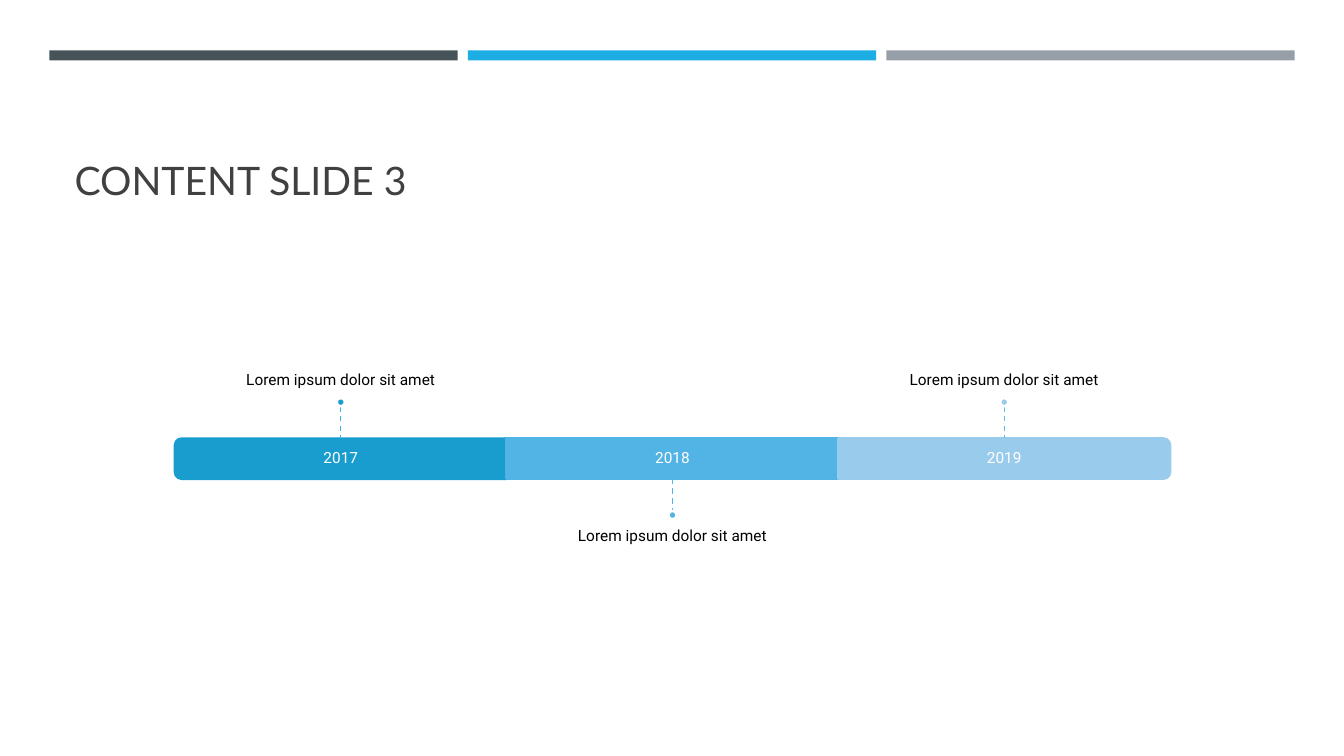
from dataclasses import dataclass

import pptx
import pptx.dml.color
import pptx.enum.dml
import pptx.enum.shapes
import pptx.enum.text
import pptx.oxml
import pptx.util

Inches = pptx.util.Inches
Pt = pptx.util.Pt
Shape = pptx.enum.shapes.MSO_SHAPE
Anchor = pptx.enum.text.MSO_ANCHOR
Align = pptx.enum.text.PP_ALIGN

COLORS = {
    "slate": "465359", "sky": "1CADE4", "gray": "969FA7", "title": "404040",
    "black": "000000", "white": "FFFFFF",
    "2017": "199DCF", "2018": "52B3E5", "2019": "99CBEC",
    "2017 dash": "36B3E9", "2018 dash": "48B8EC", "2019 dash": "5ABEEF",
}
STRIPES = ("slate", "sky", "gray")
BAR_W, BAR_H, BAR_TOP = 3.29, 0.4, 4.35
MIDDLE = 6.67
STEM, DOT = 0.32, 0.08
CAPTION_W, CAPTION_H = 5.48, 1.39
INSET = 0.09


@dataclass
class Milestone:
    """One year of the timeline, with its caption above or below the bar."""
    year: str
    caption: str
    kind: int
    rotation: int
    above: bool


MILESTONES = (
    Milestone("2017", "Lorem ipsum dolor sit amet", Shape.ROUND_2_SAME_RECTANGLE, 270, True),
    Milestone("2018", "Lorem ipsum dolor sit amet", Shape.RECTANGLE, 0, False),
    Milestone("2019", "Lorem ipsum dolor sit amet", Shape.ROUND_2_SAME_RECTANGLE, 90, True),
)


def rgb(name: str) -> pptx.dml.color.RGBColor:
    """Return the named colour."""
    return pptx.dml.color.RGBColor.from_string(COLORS[name])


def apply(target: object, values: dict) -> None:
    """Set each attribute of the target from a dict of format values."""
    for name, value in values.items():
        setattr(target, name, value)


def add_shape(s, kind: int, box: tuple, fill: str, line: str = ""):
    """Add a flat filled shape, outlined only if a line colour is given."""
    sp = s.shapes.add_shape(kind, *map(Inches, box))
    sp.shadow.inherit = False
    sp.fill.solid()
    sp.fill.fore_color.rgb = rgb(fill)
    if line:
        sp.line.color.rgb = rgb(line)
        sp.line.width = Pt(1.75)
    else:
        sp.line.fill.background()
    return sp


def add_text(s, text: str, box: tuple, color: str, anchor: int, insets: tuple) -> None:
    """Add a centred text box; insets run left, top, right, bottom."""
    tf = s.shapes.add_textbox(*map(Inches, box)).text_frame
    sides = ("margin_left", "margin_top", "margin_right", "margin_bottom")
    apply(tf, {"word_wrap": True, "vertical_anchor": anchor,
               **dict(zip(sides, map(Inches, insets)))})
    p = tf.paragraphs[0]
    apply(p, {"alignment": Align.CENTER, "line_spacing": 0.9})
    r = p.add_run()
    r.text = text
    apply(r.font, {"name": "Roboto", "size": Pt(11)})
    r.font.color.rgb = rgb(color)


def add_stem(s, x: float, start: float, end: float, color: str):
    """Add a vertical dashed line."""
    line = s.shapes.add_connector(pptx.enum.shapes.MSO_CONNECTOR.STRAIGHT,
                                  *map(Inches, (x, start, x, end)))
    apply(line.line, {"width": Pt(1), "dash_style": pptx.enum.dml.MSO_LINE.DASH})
    line.line.color.rgb = rgb(color)
    line._element.spPr.append(pptx.oxml.parse_xml(
        '<a:effectLst xmlns:a="http://schemas.openxmlformats.org/drawingml/2006/main"/>'))
    return line


def add_milestone(s, m: Milestone, x: float) -> None:
    """Draw a bar segment centred on x, with its year, caption, stem and dot."""
    w, h = (BAR_H, BAR_W) if m.rotation else (BAR_W, BAR_H)
    center = BAR_TOP + BAR_H / 2
    bar = add_shape(s, m.kind, (x - w / 2, center - h / 2, w, h), m.year, m.year)
    bar.rotation = m.rotation
    add_text(s, m.year, (x - BAR_W / 2, BAR_TOP, BAR_W, BAR_H), "white",
             Anchor.MIDDLE, (INSET,) * 4)

    left = x - CAPTION_W / 2
    if m.above:
        start, end = BAR_TOP - STEM, BAR_TOP
        dot_top = start - DOT
        add_text(s, m.caption, (left, dot_top - CAPTION_H, CAPTION_W, CAPTION_H),
                 "black", Anchor.BOTTOM, (0, 0, 0, INSET))
    else:
        start = BAR_TOP + BAR_H
        end = dot_top = start + STEM
        add_text(s, m.caption, (left, dot_top + DOT, CAPTION_W, CAPTION_H),
                 "black", Anchor.TOP, (0, INSET, 0, 0))
    stem = add_stem(s, x, start, end, f"{m.year} dash")
    if not m.rotation:
        stem.begin_connect(bar, 2)
    add_shape(s, Shape.OVAL, (x - DOT / 2, dot_top, DOT, DOT), m.year, "white")


def add_title(s, text: str) -> None:
    """Place and format the title placeholder."""
    sp = s.shapes.title
    apply(sp, {"left": Inches(0.64), "top": Inches(0.77),
               "width": Inches(12.06), "height": Inches(1.3)})
    sp.text_frame.vertical_anchor = Anchor.BOTTOM
    p = sp.text_frame.paragraphs[0]
    p.alignment = Align.LEFT
    r = p.add_run()
    r.text = text
    apply(r.font, {"name": "Lato", "size": Pt(28)})
    r.font.color.rgb = rgb("title")


def main() -> None:
    """Build the timeline slide."""
    prs = pptx.Presentation()
    apply(prs, {"slide_width": Inches(13.33), "slide_height": Inches(7.5)})
    s = prs.slides.add_slide(prs.slide_layouts[5])
    add_title(s, "CONTENT SLIDE 3")
    for i, color in enumerate(STRIPES):
        add_shape(s, Shape.RECTANGLE, (0.49 + 4.15 * i, 0.5, 4.05, 0.1), color)
    for i, m in enumerate(MILESTONES):
        add_milestone(s, m, MIDDLE + BAR_W * (i - 1))
    prs.save("out.pptx")


if __name__ == "__main__":
    main()
